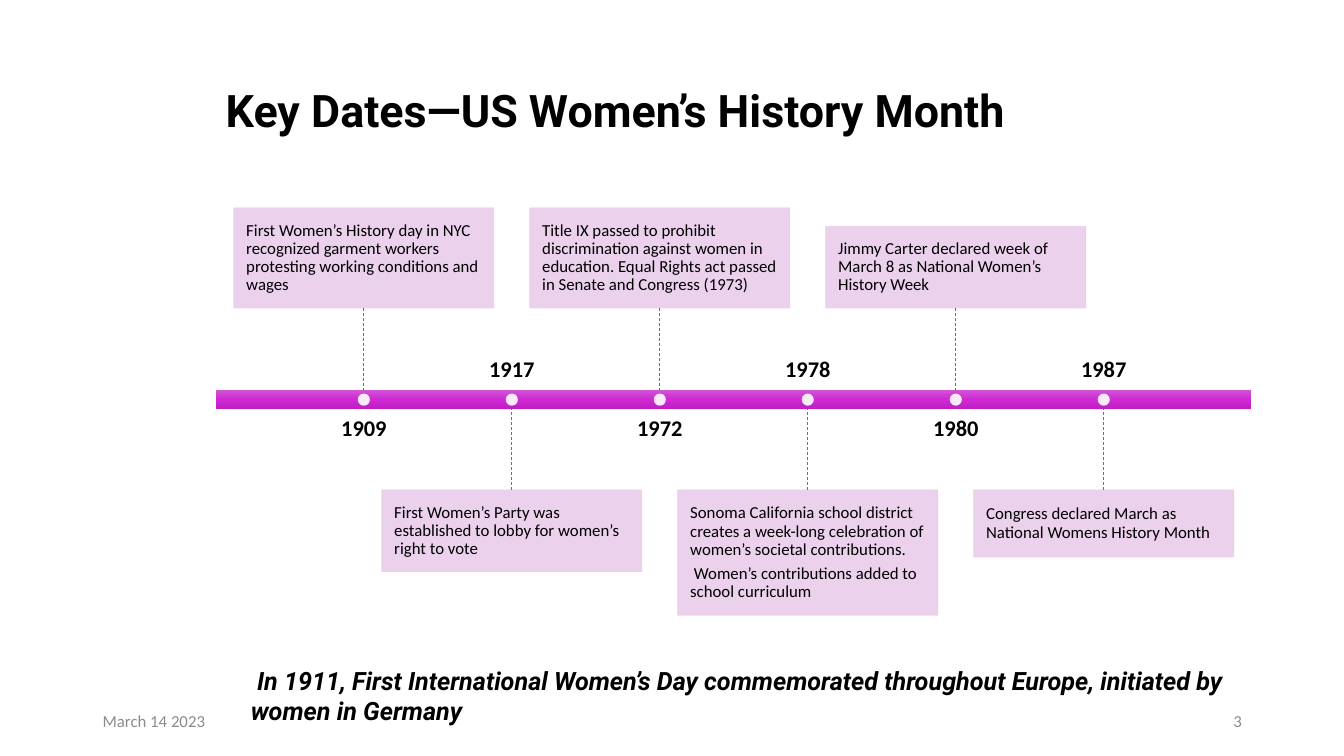
"""Build the timeline slide of key dates in US Women's History Month."""
from copy import deepcopy
from dataclasses import dataclass
from typing import Any, NamedTuple

from lxml import etree
from pptx import Presentation
from pptx.dml.color import RGBColor
from pptx.enum.dml import MSO_LINE
from pptx.enum.shapes import MSO_CONNECTOR, MSO_SHAPE
from pptx.enum.text import MSO_ANCHOR, PP_ALIGN
from pptx.oxml.ns import qn
from pptx.util import Pt

LEFT, CENTER, RIGHT = PP_ALIGN.LEFT, PP_ALIGN.CENTER, PP_ALIGN.RIGHT
TOP, MIDDLE, BOTTOM = MSO_ANCHOR.TOP, MSO_ANCHOR.MIDDLE, MSO_ANCHOR.BOTTOM
RECTANGLE, OVAL = MSO_SHAPE.RECTANGLE, MSO_SHAPE.OVAL
STRAIGHT, DASH = MSO_CONNECTOR.STRAIGHT, MSO_LINE.DASH
SIDE_TOP, SIDE_BOTTOM = 0, 2


@dataclass(frozen=True)
class Theme:
    """Colours, fonts and type sizes of the slide."""
    ink: str = "000000"
    muted: str = "8C8C8C"
    card: str = "EBCDEC"
    dot: str = "FFFFFF"
    stem: str = "C830CC"
    bar: tuple[str, ...] = ("D055D4", "CF28D4", "BF1DC3")
    opacity: int = 90
    heading_font: str = "Roboto"
    body_font: str = "Calibri"
    title_size: float = 32
    note_size: float = 18
    year_size: float = 16
    body_size: float = 12


class Box(NamedTuple):
    """A rectangle in points."""
    left: float
    top: float
    width: float
    height: float

    def lengths(self) -> tuple[Any, ...]:
        """Return the four sides as lengths."""
        return tuple(Pt(value) for value in self)


class Event(NamedTuple):
    """A date on the timeline with its card."""
    year: str
    card_height: float
    paragraphs: tuple[str, ...]


class Style(NamedTuple):
    """The look of a text block."""
    font: dict[str, Any]
    color: str
    paragraph: dict[str, Any]
    frame: dict[str, Any]


class Label(NamedTuple):
    """A free text on the slide."""
    text: str
    box: Box
    style: Style


THEME = Theme()
BAR = Box(154.1, 278.6, 739.4, 13.7)
FIRST_CENTER, EVENT_STEP = 259.9, 105.7
CARD_WIDTH, CARDS_ABOVE_BOTTOM, CARDS_BELOW_TOP = 185.8, 220, 350
YEAR_WIDTH, YEAR_HEIGHT, YEAR_GAP = 169.2, 38.9, 5.7
DOT_SIZE = 8.7

EVENTS = (
    Event("1909", 71.5, ("First Women’s History day in NYC recognized garment workers "
                         "protesting working conditions and wages",)),
    Event("1917", 58.3, ("First Women’s Party was established to lobby for women’s right to vote",)),
    Event("1972", 71.5, ("Title IX passed to prohibit discrimination against women in education. "
                         "Equal Rights act passed in Senate and Congress (1973)",)),
    Event("1978", 89.5, ("Sonoma California school district creates a week-long celebration of "
                         "women’s societal contributions.",
                         " Women’s contributions added to school curriculum")),
    Event("1980", 58.3, ("Jimmy Carter declared week of March 8 as National Women’s History Week",)),
    Event("1987", 47.9, ("Congress declared March as National Womens History Month",)),
)


def font_format(name: str, size: float, **extra: Any) -> dict[str, Any]:
    """Return the font attributes of a text style."""
    return {"name": name, "size": Pt(size), **extra}


def frame_format(anchor: Any, horizontal: float = 7.2, vertical: float = 3.6) -> dict[str, Any]:
    """Return the text frame attributes of a text style."""
    return {"word_wrap": True, "vertical_anchor": anchor,
            "margin_left": Pt(horizontal), "margin_right": Pt(horizontal),
            "margin_top": Pt(vertical), "margin_bottom": Pt(vertical)}


def year_style(anchor: Any) -> Style:
    """Return the style of a year label."""
    return Style(font_format(THEME.body_font, THEME.year_size, bold=True), THEME.ink,
                 {"alignment": CENTER, "line_spacing": 0.9, "space_after": Pt(5.6)},
                 frame_format(anchor, 0, 0))


def footer_style(alignment: Any) -> Style:
    """Return the style of a footer text."""
    return Style(font_format(THEME.body_font, THEME.body_size), THEME.muted,
                 {"alignment": alignment, "space_after": Pt(6)}, frame_format(MIDDLE))


CARD_STYLE = Style(font_format(THEME.body_font, THEME.body_size), THEME.ink,
                   {"alignment": LEFT, "line_spacing": 0.9, "space_after": Pt(4.2)},
                   frame_format(MIDDLE, 8.9, 8.9))
TITLE_STYLE = Style(font_format(THEME.heading_font, THEME.title_size, bold=True), THEME.ink,
                    {"alignment": LEFT, "line_spacing": 0.9}, frame_format(MIDDLE))
NOTE_STYLE = Style(font_format(THEME.heading_font, THEME.note_size, bold=True, italic=True),
                   THEME.ink, {"alignment": LEFT}, frame_format(TOP))

LABELS = (
    Label("Key Dates—US Women’s History Month", Box(154.1, 28.8, 739.4, 104.4), TITLE_STYLE),
    Label("March 14 2023", Box(66.2, 500.4, 216, 28.8), footer_style(LEFT)),
    Label("3", Box(678.2, 500.4, 216, 28.8), footer_style(RIGHT)),
    Label(" In 1911, First International Women’s Day commemorated throughout Europe, "
          "initiated by women in Germany", Box(172.1, 471.6, 722.2, 51.1), NOTE_STYLE),
)


def apply_format(target: Any, values: dict[str, Any]) -> None:
    """Set each named attribute on the target."""
    for name, value in values.items():
        setattr(target, name, value)


def write_text(shape: Any, paragraphs: tuple[str, ...], style: Style) -> None:
    """Fill a shape with styled paragraphs."""
    frame = shape.text_frame
    apply_format(frame, style.frame)
    for index, text in enumerate(paragraphs):
        paragraph = frame.add_paragraph() if index else frame.paragraphs[0]
        apply_format(paragraph, style.paragraph)
        run = paragraph.add_run()
        run.text = text
        apply_format(run.font, style.font)
        run.font.color.rgb = RGBColor.from_string(style.color)


def add_label(slide: Any, label: Label) -> None:
    """Add a text box."""
    write_text(slide.shapes.add_textbox(*label.box.lengths()), (label.text,), label.style)


def add_plain_shape(slide: Any, kind: Any, box: Box) -> Any:
    """Add a preset shape without shadow or outline."""
    shape = slide.shapes.add_shape(kind, *box.lengths())
    shape.shadow.inherit = False
    shape.line.fill.background()
    return shape


def fill_translucent(shape: Any, fill: Any, color: str) -> None:
    """Give a fill its colour and make all colours of the shape translucent."""
    fill.solid()
    fill.fore_color.rgb = RGBColor.from_string(color)
    for element in shape._element.spPr.iter(qn("a:srgbClr")):
        if len(element) == 0:
            etree.SubElement(element, qn("a:alpha"), val=str(THEME.opacity * 1000))


def add_bar(slide: Any) -> None:
    """Add the timeline bar with its three-stop gradient."""
    bar = add_plain_shape(slide, RECTANGLE, BAR)
    bar.fill.gradient()
    bar.fill.gradient_angle = 270
    stop_list = bar._element.spPr.find(qn("a:gradFill")).find(qn("a:gsLst"))
    stop_list.insert(1, deepcopy(stop_list[0]))
    for index, (stop, color) in enumerate(zip(bar.fill.gradient_stops, THEME.bar)):
        stop.position = index / (len(THEME.bar) - 1)
        stop.color.rgb = RGBColor.from_string(color)


def add_event(slide: Any, index: int, event: Event) -> None:
    """Add the card, stem, year and dot of one event."""
    above = index % 2 == 0
    center = FIRST_CENTER + index * EVENT_STEP
    bar_bottom = BAR.top + BAR.height
    card_top = CARDS_ABOVE_BOTTOM - event.card_height if above else CARDS_BELOW_TOP
    card = add_plain_shape(slide, RECTANGLE,
                           Box(center - CARD_WIDTH / 2, card_top, CARD_WIDTH, event.card_height))
    fill_translucent(card, card.fill, THEME.card)
    fill_translucent(card, card.line.fill, THEME.card)
    card.line.width = Pt(0.5)
    write_text(card, event.paragraphs, CARD_STYLE)

    stem_start = CARDS_ABOVE_BOTTOM if above else CARDS_BELOW_TOP
    stem_end = BAR.top if above else bar_bottom
    stem = slide.shapes.add_connector(STRAIGHT, Pt(center), Pt(stem_start), Pt(center), Pt(stem_end))
    stem.begin_connect(card, SIDE_BOTTOM if above else SIDE_TOP)
    stem.line.color.rgb = RGBColor.from_string(THEME.stem)
    apply_format(stem.line, {"width": Pt(0.5), "dash_style": DASH})
    etree.SubElement(stem._element.spPr, qn("a:effectLst"))

    year_top = bar_bottom + YEAR_GAP if above else BAR.top - YEAR_GAP - YEAR_HEIGHT
    year_box = Box(center - YEAR_WIDTH / 2, year_top, YEAR_WIDTH, YEAR_HEIGHT)
    add_label(slide, Label(event.year, year_box, year_style(TOP if above else BOTTOM)))

    dot_top = BAR.top + (BAR.height - DOT_SIZE) / 2
    dot = add_plain_shape(slide, OVAL, Box(center - DOT_SIZE / 2, dot_top, DOT_SIZE, DOT_SIZE))
    fill_translucent(dot, dot.fill, THEME.dot)


def main() -> None:
    """Build and save the presentation."""
    presentation = Presentation()
    apply_format(presentation, {"slide_width": Pt(960), "slide_height": Pt(540)})
    slide = presentation.slides.add_slide(presentation.slide_layouts[6])
    add_bar(slide)
    for index, event in enumerate(EVENTS):
        add_event(slide, index, event)
    for label in LABELS:
        add_label(slide, label)
    presentation.save("out.pptx")


if __name__ == "__main__":
    main()
